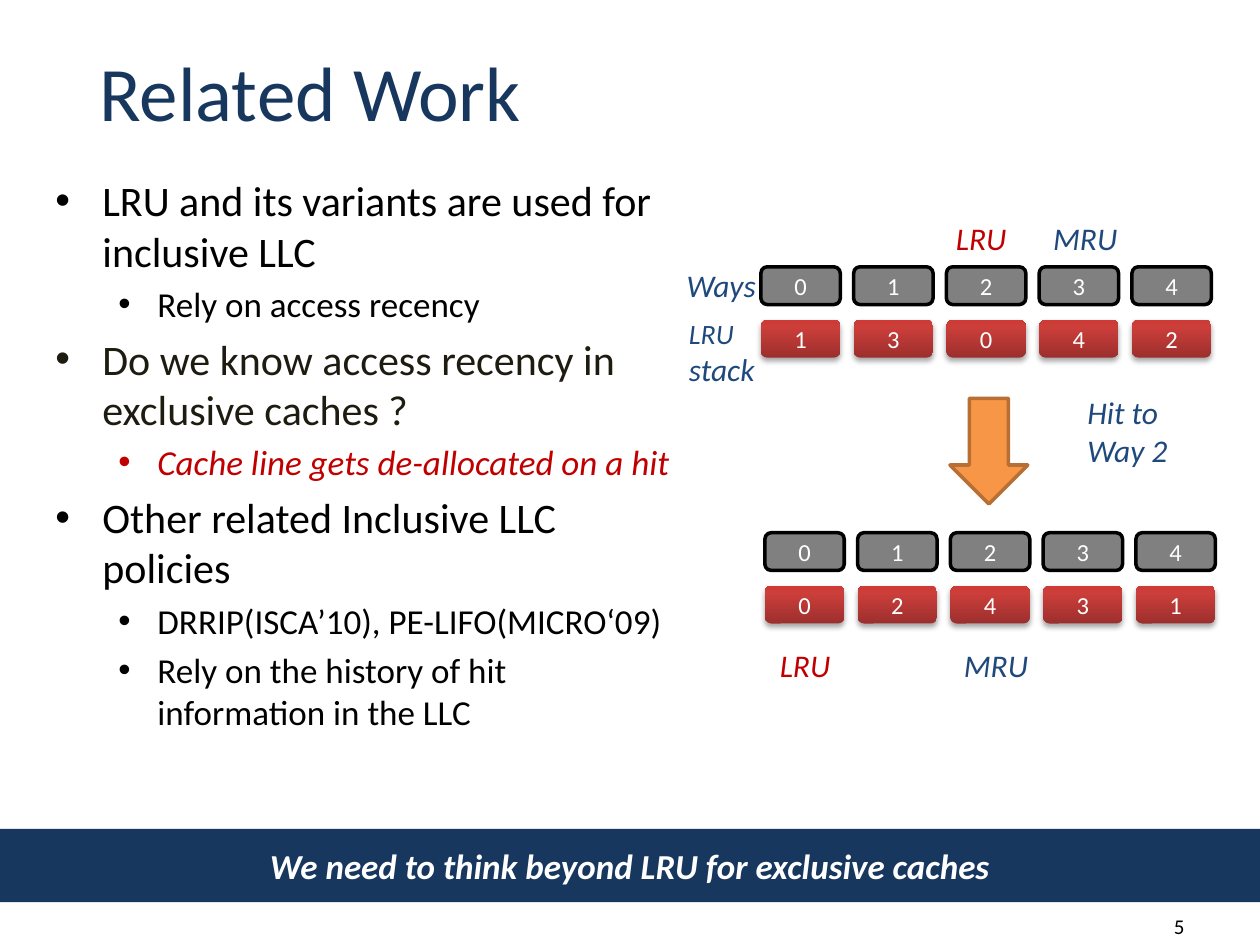
from copy import deepcopy

from lxml.etree import SubElement
from pptx import Presentation
from pptx.dml.color import RGBColor
from pptx.enum.shapes import MSO_SHAPE
from pptx.enum.text import MSO_ANCHOR, MSO_AUTO_SIZE, PP_ALIGN
from pptx.oxml.ns import qn
from pptx.util import Cm, Pt

NAVY = RGBColor(0x17, 0x37, 0x5E)
BLUE = RGBColor(0x1F, 0x49, 0x7D)
RED = RGBColor(0xC0, 0x00, 0x00)
BLACK = RGBColor(0x00, 0x00, 0x00)
BROWN_BLACK = RGBColor(0x1E, 0x1C, 0x11)
WHITE = RGBColor(0xFF, 0xFF, 0xFF)
GREY = RGBColor(0x80, 0x80, 0x80)
ORANGE = RGBColor(0xF7, 0x96, 0x46)
DARK_ORANGE = RGBColor(0xB7, 0x6F, 0x34)
STACK_GRADIENT = [
    (0.0, RGBColor(0x9C, 0x2F, 0x2D)),
    (0.8, RGBColor(0xCB, 0x3E, 0x3A)),
    (1.0, RGBColor(0xCE, 0x3B, 0x37)),
]


class SlideBuilder:
    """Holds the text style and the slide being filled."""

    font_name = "Calibri"
    # Per list level: left indent, hanging indent (cm) and text size
    levels = [(0.95, 0.95, 24), (2.06, 0.79, 20)]

    def __init__(self, slide):
        self.slide = slide

    def add_text(self, paragraph, text, size, color, **extra):
        run = paragraph.add_run()
        run.text = text
        run.font.color.rgb = color
        for name, value in {"name": self.font_name, "size": Pt(size), **extra}.items():
            setattr(run.font, name, value)

    def place(self, shape, box):
        for name, value in zip(("left", "top", "width", "height"), box):
            setattr(shape, name, Cm(value))

    def title(self, text, box):
        title = self.slide.shapes.title
        self.place(title, box)
        title.text_frame.vertical_anchor = MSO_ANCHOR.MIDDLE
        paragraph = title.text_frame.paragraphs[0]
        paragraph.alignment = PP_ALIGN.LEFT
        self.add_text(paragraph, text, 44, NAVY)

    def bullets(self, items, box):
        body = self.slide.placeholders[1]
        self.place(body, box)
        frame = body.text_frame
        frame.auto_size = MSO_AUTO_SIZE.NONE
        for index, (level, text, color, italic) in enumerate(items):
            paragraph = frame.add_paragraph() if index else frame.paragraphs[0]
            paragraph.level = level
            indent, hanging, size = self.levels[level]
            props = paragraph._p.get_or_add_pPr()
            props.set("marL", str(Cm(indent)))
            props.set("indent", str(-Cm(hanging)))
            SubElement(props, qn("a:buFont"), typeface="Arial")
            SubElement(props, qn("a:buChar"), char="•")
            self.add_text(paragraph, text, size, color, italic=italic)

    def shape(self, kind, box, fill=None, line=None, text="", size=14, **extra):
        shape = self.slide.shapes.add_shape(kind, *map(Cm, box))
        shape.shadow.inherit = False
        if fill is not None:
            shape.fill.solid()
            shape.fill.fore_color.rgb = fill
        if line is None:
            shape.line.fill.background()
        else:
            shape.line.color.rgb = line
            shape.line.width = Pt(2)
        if text:
            shape.text_frame.vertical_anchor = MSO_ANCHOR.MIDDLE
            paragraph = shape.text_frame.paragraphs[0]
            paragraph.alignment = PP_ALIGN.CENTER
            self.add_text(paragraph, text, size, WHITE, **extra)
        return shape

    def stack_cell(self, box, text):
        cell = self.shape(MSO_SHAPE.ROUNDED_RECTANGLE, box, text=text)
        cell.fill.gradient()
        cell.fill.gradient_angle = 90
        props = cell._element.spPr
        stop_list = props.find(qn("a:gradFill")).find(qn("a:gsLst"))
        stop_list.append(deepcopy(stop_list[-1]))
        for stop, (position, color) in zip(cell.fill.gradient_stops, STACK_GRADIENT):
            stop.position = position
            stop.color.rgb = color
        # Soft shadow below the cell
        shadow = SubElement(
            props.find(qn("a:effectLst")), qn("a:outerShdw"), blurRad=str(Pt(3.1)),
            dist=str(Pt(1.8)), dir="5400000", rotWithShape="0")
        shadow_color = SubElement(shadow, qn("a:srgbClr"), val="000000")
        SubElement(shadow_color, qn("a:alpha"), val="35000")

    def cache_set(self, left, top, stack):
        """Row of ways with the LRU stack positions under it."""
        for way, position in enumerate(stack):
            x = left + way * 1.87
            self.shape(MSO_SHAPE.ROUNDED_RECTANGLE, (x, top, 1.6, 0.76),
                       GREY, BLACK, str(way))
            self.stack_cell((x, top + 1.07, 1.6, 0.76), str(position))

    def label(self, lines, box, color=BLUE, sizes=(18, 18), italic=True,
              align=PP_ALIGN.LEFT, wrap=False):
        frame = self.slide.shapes.add_textbox(*map(Cm, box)).text_frame
        frame.word_wrap = wrap
        for index, (text, size) in enumerate(zip(lines, sizes)):
            paragraph = frame.add_paragraph() if index else frame.paragraphs[0]
            paragraph.alignment = align
            self.add_text(paragraph, text, size, color, italic=italic)


def main():
    deck = Presentation()
    deck.slide_width, deck.slide_height = Cm(25.4), Cm(19.05)
    builder = SlideBuilder(deck.slides.add_slide(deck.slide_layouts[1]))

    # Conclusion banner
    builder.shape(MSO_SHAPE.RECTANGLE, (0, 16.71, 25.4, 1.48), NAVY,
                  text="We need to think beyond LRU for exclusive caches",
                  size=20, bold=True, italic=True)

    # Title and list
    builder.title("Related Work", (1.75, 0.23, 22.86, 3.18))
    builder.bullets([
        (0, "LRU and its variants are used for inclusive LLC", BLACK, False),
        (1, "Rely on access recency", BLACK, False),
        (0, "Do we know access recency in exclusive caches ?", BROWN_BLACK, False),
        (1, "Cache line gets de-allocated on a hit", RED, True),
        (0, "Other related Inclusive LLC policies", BLACK, False),
        (1, "DRRIP(ISCA’10), PE-LIFO(MICRO‘09)", BLACK, False),
        (1, "Rely on the history of hit information in the LLC", BLACK, False),
    ], (0.86, 3.4, 12.93, 12.5))

    # Cache set before and after the hit
    builder.cache_set(15.34, 5.38, [1, 3, 0, 4, 2])
    builder.cache_set(15.42, 10.74, [0, 2, 4, 3, 1])
    builder.shape(MSO_SHAPE.DOWN_ARROW, (19.15, 8.03, 1.57, 2.13),
                  ORANGE, DARK_ORANGE)

    # Labels of the diagram
    builder.label(["Hit to", "Way 2"], (21.67, 7.8, 2.13, 1.8))
    builder.label(["Ways"], (13.59, 5.23, 1.93, 1.02))
    builder.label(["LRU", "stack"], (13.64, 6.25, 1.85, 1.7), sizes=(16, 18))
    for lru_left, mru_left, top in [(19.02, 20.98, 4.29), (15.47, 19.18, 12.9)]:
        builder.label(["LRU"], (lru_left, top, 1.55, 1.02), RED)
        builder.label(["MRU"], (mru_left, top, 1.83, 1.02))

    # Slide number
    builder.label(["5"], (18.21, 18.29, 5.92, 1.02), BLACK, sizes=[12],
                  italic=False, align=PP_ALIGN.RIGHT, wrap=True)

    deck.save("out.pptx")


if __name__ == "__main__":
    main()
